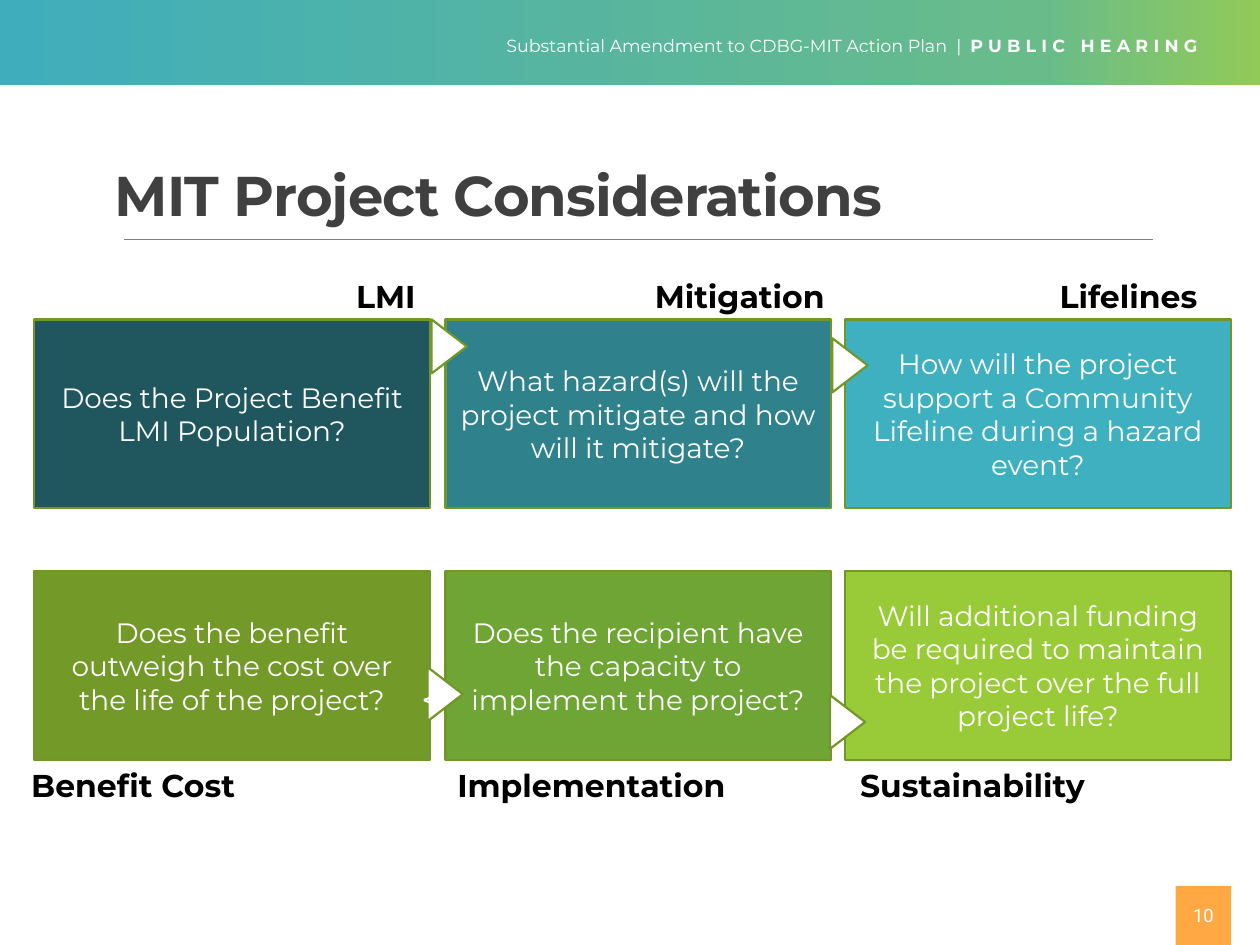
import pptx
import pptx.util
import pptx.dml.color
import pptx.enum.shapes
import pptx.enum.text
import pptx.oxml
import pptx.oxml.ns

Cm, Pt = pptx.util.Cm, pptx.util.Pt
SHAPE = pptx.enum.shapes.MSO_SHAPE
ALIGN = pptx.enum.text.PP_ALIGN
MIDDLE = pptx.enum.text.MSO_ANCHOR.MIDDLE
NO_FIT = pptx.enum.text.MSO_AUTO_SIZE.NONE

HEADER = ["Substantial Amendment to CDBG-MIT Action Plan  |  ", "PUBLIC HEARING"]
HEADER_STOPS = [(0, "3FADBB"), (83, "69BC8A"), (100, "92CA58")]
TITLE = "MIT Project Considerations"
PAGE = "10"
CARD_LINE = "719629"
CARD_HEIGHT = 3.81

COLUMNS = [(0.69, 7.98), (8.98, 7.77), (17.04, 7.77)]
ROWS = [
    (6.44, 5.47, [
        ("LMI", 6.93, "Does the Project Benefit\nLMI Population?", "20575E"),
        ("Mitigation", 12.95, "What hazard(s) will the project mitigate and how will it mitigate?", "2F828C"),
        ("Lifelines", 21.11, "How will the project support a Community Lifeline during a hazard event?", "3FB0BF"),
    ]),
    (11.51, 15.32, [
        ("Benefit Cost", 0.38, "Does the benefit outweigh the cost over the life of the project?", "739A28"),
        ("Implementation", 8.97, "Does the recipient have the capacity to implement the project?", "6EA534"),
        ("Sustainability", 17.09, "Will additional funding be required to maintain the project over the full project life?", "99CB38"),
    ]),
]
ARROWS = [(8.51, 6.63, ""), (16.59, 7.01, ""), (8.43, 13.64, "v"), (16.54, 14.2, "")]

CARD_TEXT = {"name": "Montserrat", "size": Pt(16)}
LABEL_TEXT = {"name": "Montserrat", "size": Pt(18), "bold": True}
HEADER_TEXT = {"name": "Montserrat", "size": Pt(10)}
TITLE_TEXT = {"name": "Montserrat", "size": Pt(32), "bold": True}
PAGE_TEXT = {"name": "Roboto", "size": Pt(10.5)}
ARROW_TEXT = {"name": "Calibri", "size": Pt(18)}


def colour(target, value):
    target.rgb = pptx.dml.color.RGBColor.from_string(value)


def style(run, values, value, spacing=0):
    for attribute, setting in values.items():
        setattr(run.font, attribute, setting)
    colour(run.font.color, value)
    if spacing:
        run.font._element.set("spc", str(spacing))


def write(shape, text, values, value, align=ALIGN.LEFT, wrap=True):
    frame = shape.text_frame
    frame.word_wrap = wrap
    frame.text = text
    for paragraph in frame.paragraphs:
        paragraph.alignment = align
        for run in paragraph.runs:
            style(run, values, value)
    return frame


def add_block(slide, kind, box, fill=None, line=None):
    shape = slide.shapes.add_shape(kind, *map(Cm, box))
    shape.shadow.inherit = False
    if fill:
        shape.fill.solid()
        colour(shape.fill.fore_color, fill)
    if line:
        colour(shape.line.color, line)
        shape.line.width = Pt(1.25)
    else:
        shape.line.fill.background()
    return shape


def add_header(slide):
    band = add_block(slide, SHAPE.RECTANGLE, (0, 0, 25.4, 1.72))
    stops = "".join(
        f'<a:gs pos="{position * 1000}"><a:srgbClr val="{value}"/></a:gs>'
        for position, value in HEADER_STOPS
    )
    gradient = pptx.oxml.parse_xml(
        f'<a:gradFill {pptx.oxml.ns.nsdecls("a")} rotWithShape="1">'
        f'<a:gsLst>{stops}</a:gsLst><a:lin ang="0" scaled="0"/></a:gradFill>'
    )
    band._element.spPr.find(pptx.oxml.ns.qn("a:prstGeom")).addnext(gradient)
    heading = slide.shapes.add_textbox(Cm(9.96), Cm(0.58), Cm(15.21), Cm(0.68))
    frame = write(heading, HEADER[0], HEADER_TEXT, "FFFFFF")
    hearing = frame.paragraphs[0].add_run()
    hearing.text = HEADER[1]
    style(hearing, HEADER_TEXT | {"bold": True}, "FFFFFF", 300)


def add_title(slide):
    rule = slide.shapes.add_connector(
        pptx.enum.shapes.MSO_CONNECTOR.STRAIGHT, Cm(2.49), Cm(4.83), Cm(23.24), Cm(4.83)
    )
    colour(rule.line.color, "808080")
    rule.line.width = Pt(0.5)
    rule._element.spPr.append(
        pptx.oxml.parse_xml(f'<a:effectLst {pptx.oxml.ns.nsdecls("a")}/>')
    )
    title = slide.shapes.title
    title.left, title.top, title.width, title.height = map(Cm, (2.06, 2.92, 20.96, 1.9))
    frame = write(title, TITLE, TITLE_TEXT, "404040")
    frame.auto_size = NO_FIT
    frame.vertical_anchor = MIDDLE
    frame.paragraphs[0].line_spacing = 1.07
    style(frame.paragraphs[0].runs[0], TITLE_TEXT, "404040", -50)


def add_cards(slide):
    for top, label_top, cards in ROWS:
        for (left, width), (label, label_left, question, fill) in zip(COLUMNS, cards):
            card = add_block(slide, SHAPE.RECTANGLE, (left, top, width, CARD_HEIGHT), fill, CARD_LINE)
            write(card, question, CARD_TEXT, "FFFFFF", ALIGN.CENTER)
            caption = slide.shapes.add_textbox(Cm(label_left), Cm(label_top), Cm(6.1), Cm(1.02))
            write(caption, label, LABEL_TEXT, "000000", wrap=False)
    for left, top, mark in ARROWS:
        arrow = add_block(slide, SHAPE.ISOSCELES_TRIANGLE, (left, top, 1.09, 0.71), "FFFFFF", CARD_LINE)
        arrow.rotation = 90
        if mark:
            write(arrow, mark, ARROW_TEXT, "FFFFFF", ALIGN.CENTER)


def main():
    deck = pptx.Presentation()
    deck.slide_width, deck.slide_height = Cm(25.4), Cm(19.05)
    slide = deck.slides.add_slide(deck.slide_layouts[5])
    add_header(slide)
    add_title(slide)
    add_cards(slide)
    page = add_block(slide, SHAPE.RECTANGLE, (23.7, 17.86, 1.12, 1.19), "FFA844")
    write(page, PAGE, PAGE_TEXT, "FFFFFF", ALIGN.CENTER, wrap=False)
    deck.save("out.pptx")


if __name__ == "__main__":
    main()
